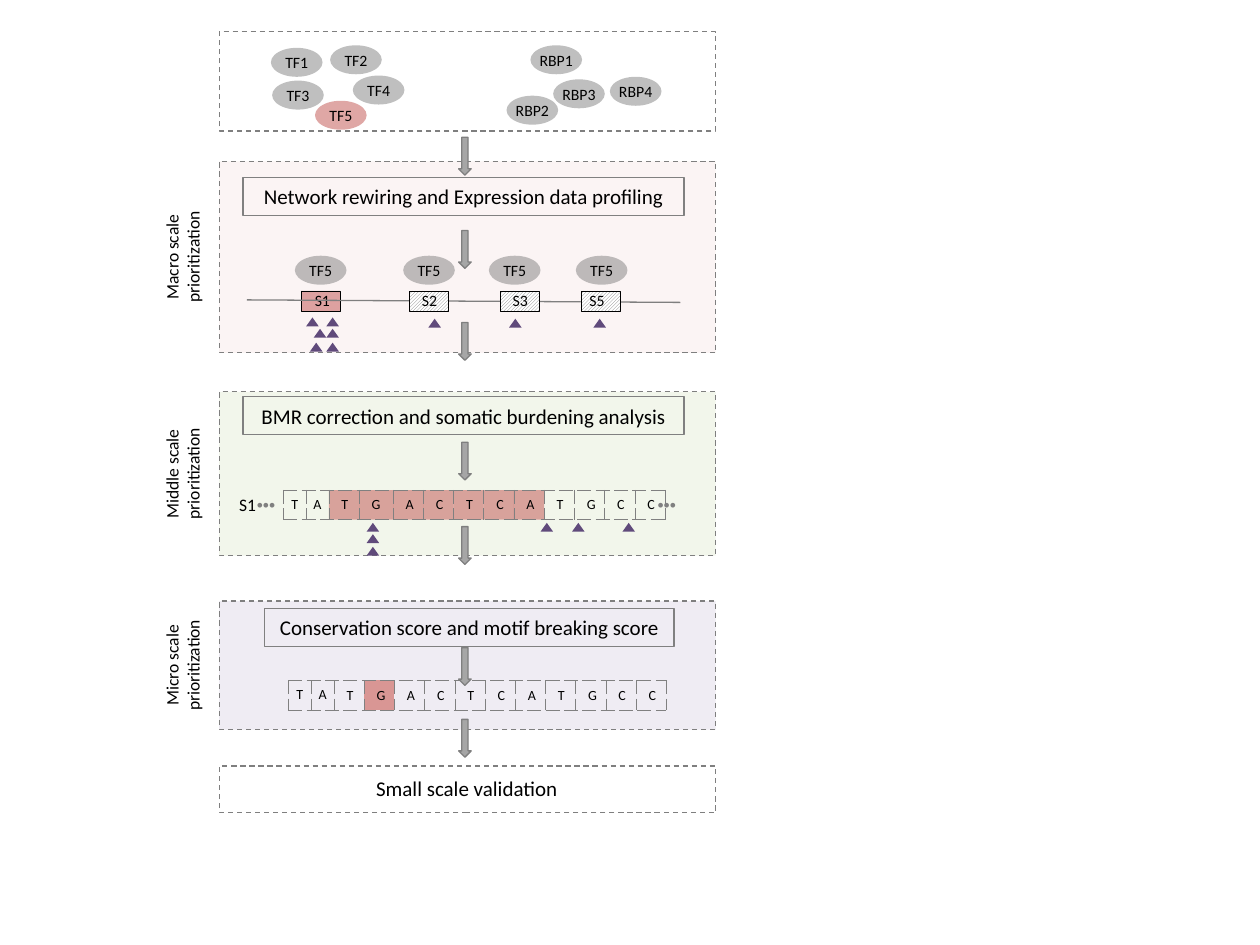
from lxml import etree
from pptx import Presentation
from pptx.dml.color import RGBColor
from pptx.enum import dml, shapes, text
from pptx.oxml.ns import qn
from pptx.util import Inches, Pt

BLACK = RGBColor(0x00, 0x00, 0x00)
WHITE = RGBColor(0xFF, 0xFF, 0xFF)
GRAY = RGBColor(0x80, 0x80, 0x80)
OUTLINE = RGBColor(0x7F, 0x7F, 0x7F)
ARROW = RGBColor(0xA6, 0xA6, 0xA6)
RED = RGBColor(0xC0, 0x50, 0x4D)
SOFT_RED = RGBColor(0xD9, 0x96, 0x94)
PURPLE = RGBColor(0x60, 0x4A, 0x7B)
ROSE = RGBColor(0xF2, 0xDC, 0xDB)
GREEN = RGBColor(0xD7, 0xE4, 0xBD)
LILAC = RGBColor(0xCC, 0xC1, 0xDA)
KIND = shapes.MSO_SHAPE

deck = Presentation()
deck.slide_width, deck.slide_height = Inches(10), Inches(7.5)
page = deck.slides.add_slide(deck.slide_layouts[6])


def write(words, box=None, at=None, size=9, font="Calibri", color=BLACK,
          align=text.PP_ALIGN.CENTER, wrap=False, rotation=0):
    """Write words into box, or into a new text box placed at (left, top, width, height)."""
    if box is None:
        box = page.shapes.add_textbox(*map(Inches, at))
    box.rotation = rotation
    frame = box.text_frame
    frame.word_wrap = wrap
    frame.auto_size = text.MSO_AUTO_SIZE.SHAPE_TO_FIT_TEXT
    para = frame.paragraphs[0]
    para.alignment = align
    span = para.add_run()
    span.text = words
    span.font.size, span.font.name = Pt(size), font
    span.font.color.rgb = color


def draw(kind, at, fill=None, opacity=100, line=None, width=0.75, dashed=False):
    """Draw a preset shape at (left, top, width, height); opacity is a percentage."""
    shape = page.shapes.add_shape(kind, *map(Inches, at))
    shape.shadow.inherit = False
    if fill is None:
        shape.fill.background()
    else:
        shape.fill.solid()
        shape.fill.fore_color.rgb = fill
        if opacity < 100:
            tint = shape._element.spPr.find(qn("a:solidFill")).find(qn("a:srgbClr"))
            etree.SubElement(tint, qn("a:alpha"), val=str(opacity * 1000))
    if line is None:
        shape.line.fill.background()
    else:
        shape.line.color.rgb = line
        shape.line.width = Pt(width)
        if dashed:
            shape.line.dash_style = dml.MSO_LINE.DASH
    return shape


# Dashed stage panels
for top, height, fill in ((0.25, 0.79, None), (1.28, 1.52, ROSE), (3.11, 1.3, GREEN),
                          (4.77, 1.02, LILAC), (6.08, 0.37, None)):
    draw(KIND.RECTANGLE, (1.74, top, 3.94, height), fill, 30, OUTLINE, dashed=True)

# Stage headings and side labels
for heading, left, top, width in (
        ("Network rewiring and Expression data profiling", 1.93, 1.41, 3.5),
        ("BMR correction and somatic burdening analysis", 1.93, 3.15, 3.5),
        ("Conservation score and motif breaking score", 2.1, 4.83, 3.25)):
    write(heading, draw(KIND.RECTANGLE, (left, top, width, 0.3), line=GRAY), size=12)
write("Small scale validation", at=(2.87, 6.11, 1.67, 0.3), size=12)
for scale, top in (("Macro", 1.82), ("Middle", 3.54), ("Micro", 5.06)):
    write(f"{scale} scale prioritization", at=(0.96, top, 0.98, 0.44), size=10,
          wrap=True, rotation=270)

# Base sequences: highlighted columns are zero-based
SEQUENCE = "TATGACTCATGCC"
for left, top, wide_column, marked, fill, opacity in (
        (2.25, 3.89, 3, range(2, 9), RED, 50), (2.29, 5.4, None, (3,), SOFT_RED, 100)):
    widths = [0.18] * 2 + [0.24] * 11
    if wide_column is not None:
        widths[wide_column] = 0.27
    table = page.shapes.add_table(1, len(SEQUENCE), Inches(left), Inches(top),
                                  Inches(sum(widths)), Inches(0.23)).table
    table.first_row = table.horz_banding = False
    for index, base in enumerate(SEQUENCE):
        table.columns[index].width = Inches(widths[index])
        cell = table.cell(0, index)
        cell.vertical_anchor = text.MSO_ANCHOR.MIDDLE
        if index < 2:
            cell.margin_left = cell.margin_right = cell.margin_top = cell.margin_bottom = 0
        para = cell.text_frame.paragraphs[0]
        para.alignment = text.PP_ALIGN.CENTER
        span = para.add_run()
        span.text = base
        span.font.size, span.font.name = Pt(8), "Calibri"
        span.font.color.rgb = BLACK
        properties = cell._tc.get_or_add_tcPr()
        if index in marked:
            cell.fill.solid()
            cell.fill.fore_color.rgb = fill
            tint = properties.find(qn("a:solidFill")).find(qn("a:srgbClr"))
            etree.SubElement(tint, qn("a:alpha"), val=str(opacity * 1000))
        else:
            cell.fill.background()
        for position, side in enumerate(("lnL", "lnR", "lnT", "lnB")):
            border = etree.Element(qn(f"a:{side}"), w=str(Pt(0.25)))
            paint = etree.SubElement(border, qn("a:solidFill"))
            etree.SubElement(paint, qn("a:srgbClr"), val=str(GRAY))
            etree.SubElement(border, qn("a:prstDash"), val="sysDash")
            properties.insert(position, border)

# Flow arrows
for top in (1.09, 1.83, 2.56, 3.51, 4.18, 5.14, 5.71):
    draw(KIND.DOWN_ARROW, (3.64, top, 0.1, 0.3), ARROW, line=OUTLINE)

# Binding sites, with the genome line over S1 and under the others
site_top, site_size = 2.31, (0.31, 0.16)
draw(KIND.RECTANGLE, (2.39, site_top, *site_size), RED, 50, BLACK, 0.25)
write("S1", at=(2.4, 2.26, 0.33, 0.25), align=text.PP_ALIGN.LEFT)
genome = page.shapes.add_connector(shapes.MSO_CONNECTOR.STRAIGHT, Inches(1.96), Inches(2.38),
                                   Inches(5.4), Inches(2.4))
genome.line.color.rgb = OUTLINE
genome.line.width = Pt(0.75)
etree.SubElement(genome._element.spPr, qn("a:effectLst"))
for name, left, label_left in (("S2", 3.25, 3.25), ("S3", 3.97, 3.97), ("S5", 4.61, 4.58)):
    site = draw(KIND.RECTANGLE, (left, site_top, *site_size), line=BLACK, width=0.25)
    site.fill.patterned()
    site.fill.pattern = dml.MSO_PATTERN.LIGHT_UPWARD_DIAGONAL
    site.fill.fore_color.rgb, site.fill.back_color.rgb = GRAY, WHITE
    write(name, at=(label_left, 2.26, 0.33, 0.25), align=text.PP_ALIGN.LEFT)

# Transcription factors and RNA-binding proteins
for name, left, top, fill in (
        ("RBP2", 4.02, 0.76, GRAY), ("RBP1", 4.21, 0.36, GRAY), ("RBP4", 4.84, 0.61, GRAY),
        ("RBP3", 4.39, 0.63, GRAY), ("TF5", 2.5, 0.8, RED), ("TF1", 2.15, 0.38, GRAY),
        ("TF2", 2.62, 0.36, GRAY), ("TF3", 2.16, 0.64, GRAY), ("TF4", 2.8, 0.6, GRAY),
        ("TF5", 2.34, 2.03, GRAY), ("TF5", 3.2, 2.03, GRAY), ("TF5", 3.88, 2.03, GRAY),
        ("TF5", 4.57, 2.03, GRAY)):
    draw(KIND.OVAL, (left, top, 0.41, 0.23), fill, 50)
    label_width = 0.47 if name.startswith("RBP") else 0.39
    write(name, at=(left + (0.41 - label_width) / 2, top - 0.01, label_width, 0.25))

# Mutations
for left, top in ((2.43, 2.52), (2.59, 2.52), (2.49, 2.61), (2.59, 2.61), (2.46, 2.72),
                  (2.59, 2.72), (3.4, 2.53), (4.04, 2.53), (4.71, 2.53),
                  (2.91, 4.15), (2.91, 4.24), (2.91, 4.34), (4.29, 4.15), (4.54, 4.15),
                  (4.94, 4.15)):
    draw(KIND.ISOSCELES_TRIANGLE, (left, top, 0.1, 0.07), PURPLE)

# Ends of the S1 sequence
write("S1", at=(1.8, 3.87, 0.34, 0.27), size=10, align=text.PP_ALIGN.LEFT)
for left in (1.94, 5.12):
    write("•••", at=(left, 3.87, 0.39, 0.27), size=10, font="Arial", color=GRAY,
          align=text.PP_ALIGN.LEFT)

deck.save("out.pptx")
